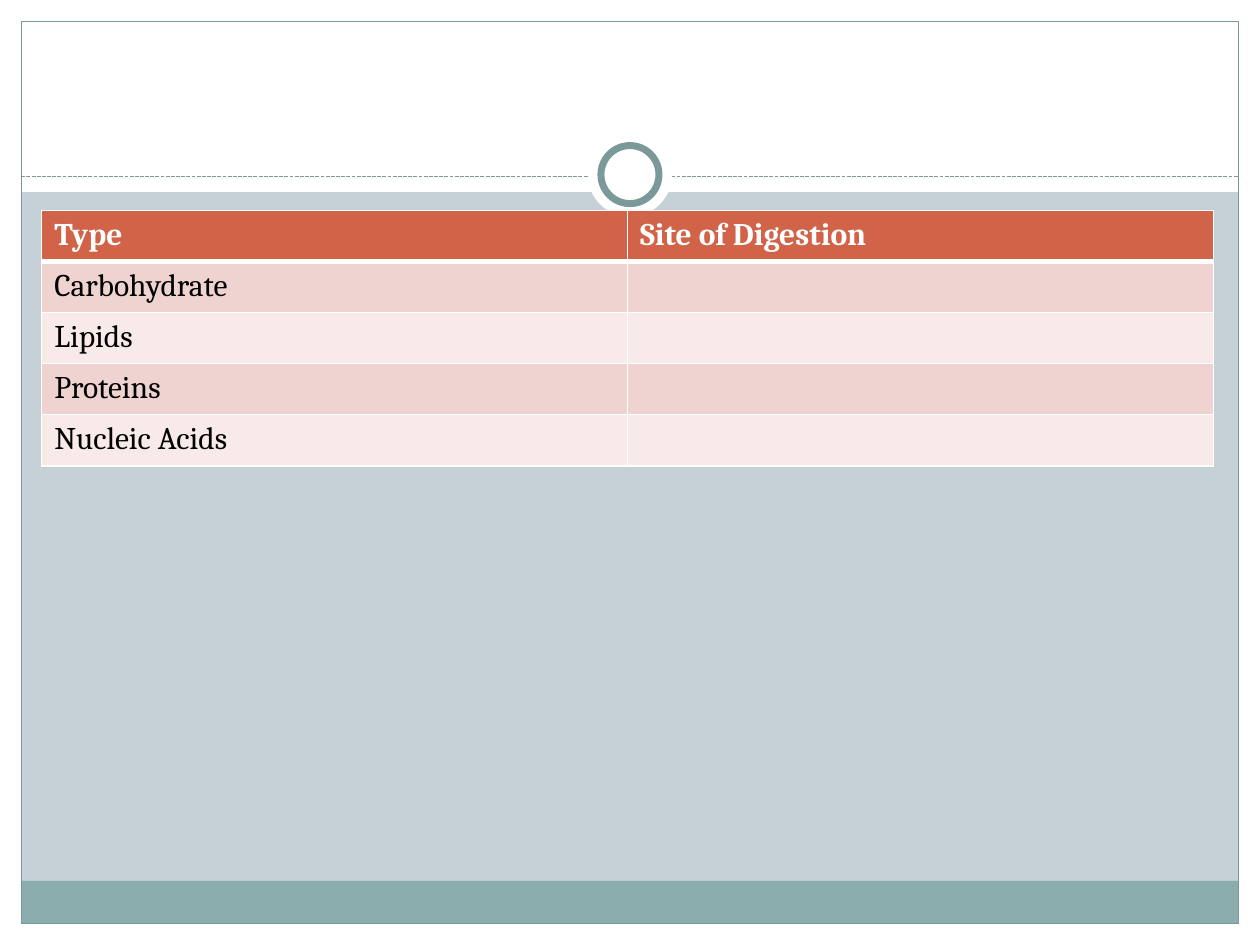
"""Build a slide with a table of nutrient types and their sites of digestion."""
from lxml.etree import SubElement
from pptx import Presentation
from pptx.dml.color import RGBColor
from pptx.enum.dml import MSO_LINE
from pptx.enum.shapes import MSO_CONNECTOR, MSO_SHAPE
from pptx.oxml.ns import qn
from pptx.util import Cm, Pt

WHITE = RGBColor(0xFF, 0xFF, 0xFF)
BLACK = RGBColor(0, 0, 0)
MIST = RGBColor(0xC5, 0xD1, 0xD7)
TEAL = RGBColor(0x8C, 0xAD, 0xAE)
SLATE = RGBColor(0x7C, 0x99, 0x9A)
RUST = RGBColor(0xD1, 0x63, 0x49)
BANDS = [RGBColor(0xEE, 0xD3, 0xD0), RGBColor(0xF7, 0xEA, 0xE9)]

ROWS = [
    ("Type", "Site of Digestion"),
    ("Carbohydrate", ""),
    ("Lipids", ""),
    ("Proteins", ""),
    ("Nucleic Acids", ""),
]

W, H, EDGE = 25.4, 19.05, 0.43
HEADER_H, FOOTER_H, RULE_Y = 3.87, 0.86, 3.56
RING_Y = 3.52
TABLE_X, TABLE_Y, COL_W, ROW_H = 0.84, 4.24, 11.81, 1.03


def add_shape(s, kind, x, y, w, h, fill=None, line=None, width=0.75):
    sp = s.shapes.add_shape(kind, Cm(x), Cm(y), Cm(w), Cm(h))
    sp.shadow.inherit = False
    if fill is None:
        sp.fill.background()
    else:
        sp.fill.solid()
        sp.fill.fore_color.rgb = fill
    if line is None:
        sp.line.fill.background()
    else:
        sp.line.color.rgb = line
        sp.line.width = Pt(width)


def add_circle(s, d, **style):
    add_shape(s, MSO_SHAPE.OVAL, (W - d) / 2, RING_Y - d / 2, d, d, **style)


def set_text(tf, text, size=18, font="Cambria", color=BLACK, bold=False):
    r = tf.paragraphs[0].add_run()
    r.text = text
    r.font.size, r.font.name, r.font.bold = Pt(size), font, bold
    r.font.color.rgb = color


def set_borders(cell, color=WHITE, **widths):
    tcPr = cell._tc.get_or_add_tcPr()
    for side in "LRTB":
        ln = SubElement(tcPr, qn(f"a:ln{side}"), w=str(Pt(widths.get(side, 1))))
        fill = SubElement(ln, qn("a:solidFill"))
        SubElement(fill, qn("a:srgbClr"), val=str(color))


def add_frame(s):
    rect = MSO_SHAPE.RECTANGLE
    inner_w, inner_h = W - 2 * EDGE, H - 2 * EDGE
    for box in [
        (0, H - EDGE, W, EDGE),
        (0, 0, W, HEADER_H),
        (0, 0, EDGE, H),
        (W - EDGE, 0, EDGE, H),
    ]:
        add_shape(s, rect, *box, fill=WHITE)
    add_shape(s, rect, EDGE, H - EDGE - FOOTER_H, inner_w, FOOTER_H, fill=TEAL)
    add_shape(s, rect, EDGE, EDGE, inner_w, inner_h, line=SLATE)

    rule = s.shapes.add_connector(
        MSO_CONNECTOR.STRAIGHT, Cm(EDGE), Cm(RULE_Y), Cm(W - EDGE), Cm(RULE_Y))
    rule.line.color.rgb = SLATE
    rule.line.width = Pt(0.75)
    rule.line.dash_style = MSO_LINE.SQUARE_DOT
    SubElement(rule._element.spPr, qn("a:effectLst"))

    add_circle(s, 1.7, fill=WHITE)
    add_circle(s, 1.17, fill=WHITE, line=SLATE, width=4)


def add_digestion_table(s):
    n, m = len(ROWS), len(ROWS[0])
    table = s.shapes.add_table(
        n, m, Cm(TABLE_X), Cm(TABLE_Y), Cm(COL_W * m), Cm(ROW_H * n)).table
    for col in table.columns:
        col.width = Cm(COL_W)
    for i, texts in enumerate(ROWS):
        head = i == 0
        table.rows[i].height = Cm(ROW_H)
        for j, text in enumerate(texts):
            cell = table.cell(i, j)
            set_borders(cell, B=3 if head else 1, T=3 if i == 1 else 1)
            cell.fill.solid()
            cell.fill.fore_color.rgb = RUST if head else BANDS[(i - 1) % 2]
            if text:
                set_text(cell.text_frame, text, bold=head,
                         color=WHITE if head else BLACK)


def main():
    prs = Presentation()
    prs.slide_width, prs.slide_height = Cm(W), Cm(H)
    s = prs.slides.add_slide(prs.slide_layouts[6])
    s.background.fill.solid()
    s.background.fill.fore_color.rgb = MIST
    add_frame(s)
    add_digestion_table(s)
    prs.save("out.pptx")


if __name__ == "__main__":
    main()
